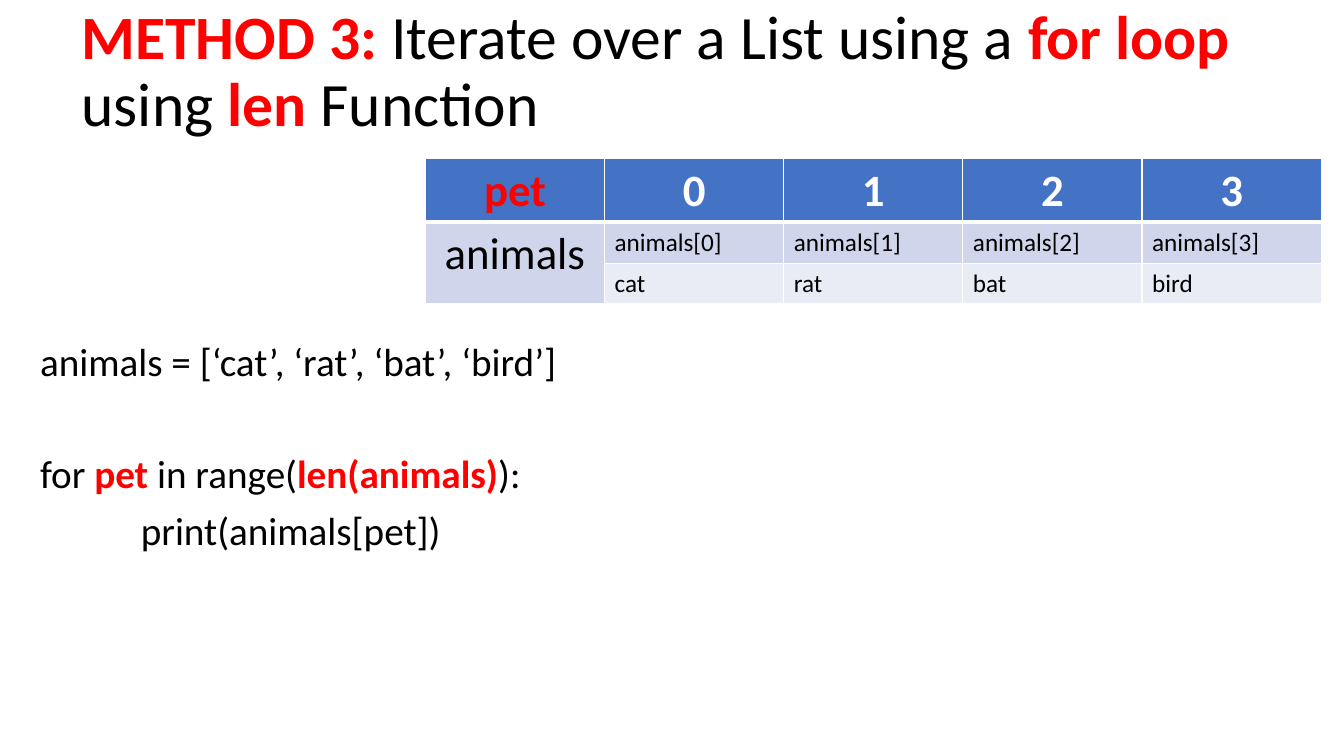
from dataclasses import dataclass

import pptx
import pptx.dml.color
import pptx.enum.text
import pptx.oxml.ns
import pptx.util
from lxml import etree
from pptx.util import Cm, Pt

FONT = "Calibri"
RED, BLACK, WHITE = "FF0000", "000000", "FFFFFF"
HEADER_FILL, BAND_FILLS = "4472C4", ("CFD5EA", "E9EBF5")
LEFT, CENTER = pptx.enum.text.PP_ALIGN.LEFT, pptx.enum.text.PP_ALIGN.CENTER


@dataclass(frozen=True)
class Piece:
    text: str
    color: str = BLACK
    bold: bool = False


@dataclass(frozen=True)
class Line:
    pieces: tuple[Piece, ...]
    size: float
    alignment: int = LEFT
    spacing: float = 1.0
    before: float = 0
    indent: float = 0


def key(text: str) -> Piece:
    return Piece(text, RED, True)


def rgb(value: str) -> pptx.dml.color.RGBColor:
    return pptx.dml.color.RGBColor.from_string(value)


def set_values(target, values: dict) -> None:
    for name, value in values.items():
        setattr(target, name, value)


def write_lines(frame, lines: list[Line]) -> None:
    for index, line in enumerate(lines):
        paragraph = frame.add_paragraph() if index else frame.paragraphs[0]
        set_values(paragraph, {
            "alignment": line.alignment,
            "line_spacing": line.spacing,
            "space_before": Pt(line.before),
        })
        if line.indent:
            paragraph._p.get_or_add_pPr().set("marL", str(Cm(line.indent)))
        for piece in line.pieces:
            run = paragraph.add_run()
            run.text = piece.text
            set_values(run.font, {"name": FONT, "size": Pt(line.size), "bold": piece.bold})
            run.font.color.rgb = rgb(piece.color)


def set_border(cell, side: str, width: float) -> None:
    qn = pptx.oxml.ns.qn
    properties = cell._tc.get_or_add_tcPr()
    border = etree.SubElement(properties, qn(f"a:ln{side}"), w=str(Pt(width)))
    fill = etree.SubElement(border, qn("a:solidFill"))
    etree.SubElement(fill, qn("a:srgbClr"), val=WHITE)


def style_cell(cell, row: int) -> None:
    widths = {"L": 1, "R": 1, "T": 3 if row == 1 else 1, "B": 3 if row == 0 else 1}
    for side, width in widths.items():
        set_border(cell, side, width)
    cell.fill.solid()
    cell.fill.fore_color.rgb = rgb(BAND_FILLS[row - 1] if row else HEADER_FILL)


def add_title(slide) -> None:
    title = slide.shapes.title
    set_values(title, {"left": Cm(1.8), "top": Cm(0), "width": Cm(30.5), "height": Cm(3.68)})
    set_values(title.text_frame, {
        "word_wrap": True,
        "auto_size": pptx.enum.text.MSO_AUTO_SIZE.NONE,
        "vertical_anchor": pptx.enum.text.MSO_ANCHOR.MIDDLE,
    })
    pieces = (
        key("METHOD 3:"), Piece(" Iterate over a List using a "), key("for loop"),
        Piece(" using "), key("len "), Piece("Function"),
    )
    write_lines(title.text_frame, [Line(pieces, 44, spacing=0.9)])


def add_code(slide) -> None:
    box = slide.shapes.add_textbox(Cm(0.76), Cm(8.51), Cm(20.57), Cm(9.83))
    box.text_frame.word_wrap = True
    loop = (key("pet"), Piece(" in range("), key("len(animals)"), Piece("):"))
    write_lines(box.text_frame, [
        Line((Piece("animals = [‘cat’, ‘rat’, ‘bat’, ‘bird’]"),), 28, spacing=0.9, before=10),
        Line((Piece("for "), *loop), 28, spacing=0.9, before=50),
        Line((Piece("print(animals[pet])"),), 28, spacing=0.9, before=10, indent=2.54),
    ])


def add_animal_table(slide, animals: list[str]) -> None:
    row_heights = (1.61, 1.03, 1.03)
    column_count = len(animals) + 1
    table = slide.shapes.add_table(
        len(row_heights), column_count, Cm(10.72), Cm(3.99), Cm(22.58), Cm(sum(row_heights))
    ).table
    for row, height in zip(table.rows, row_heights):
        row.height = Cm(height)
    for row in range(len(row_heights)):
        for column in range(column_count):
            style_cell(table.cell(row, column), row)

    # Row labels
    table.cell(1, 0).merge(table.cell(2, 0))
    write_lines(table.cell(0, 0).text_frame, [Line((key("pet"),), 32, CENTER)])
    write_lines(table.cell(1, 0).text_frame, [Line((Piece("animals"),), 32, CENTER)])

    # Index, expression and value of each animal
    for index, animal in enumerate(animals):
        column_lines = (
            Line((Piece(str(index), WHITE, True),), 32, CENTER),
            Line((Piece(f"animals[{index}]"),), 18),
            Line((Piece(animal),), 18),
        )
        for row, line in enumerate(column_lines):
            write_lines(table.cell(row, index + 1).text_frame, [line])


def main() -> None:
    presentation = pptx.Presentation()
    set_values(presentation, {"slide_width": Cm(33.87), "slide_height": Cm(19.05)})
    slide = presentation.slides.add_slide(presentation.slide_layouts[5])
    add_title(slide)
    add_code(slide)
    add_animal_table(slide, ["cat", "rat", "bat", "bird"])
    presentation.save("out.pptx")


if __name__ == "__main__":
    main()
